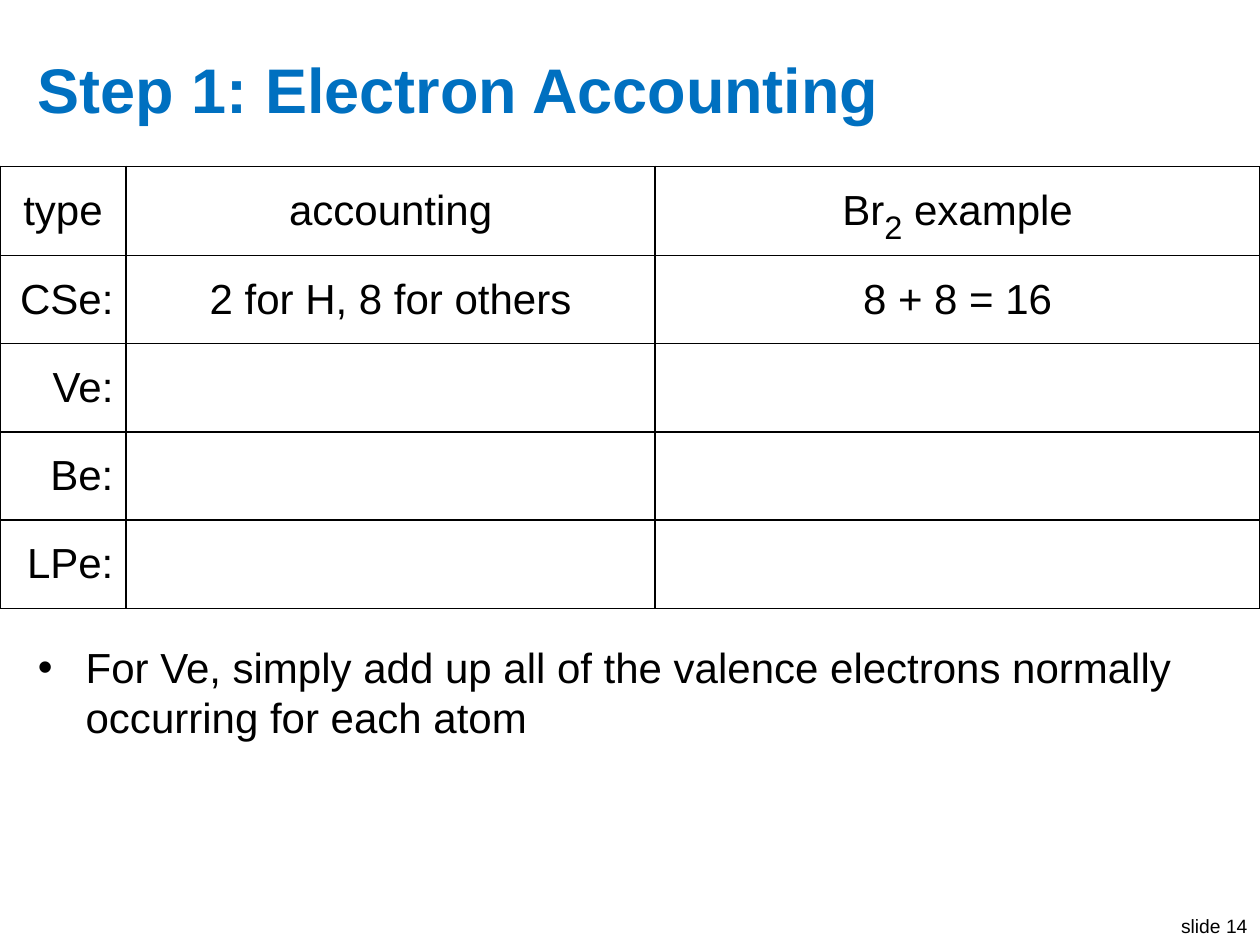
from dataclasses import dataclass

from lxml.etree import SubElement
from pptx import Presentation
from pptx.dml.color import RGBColor as RGB
from pptx.enum.text import MSO_ANCHOR as ANCHOR, MSO_AUTO_SIZE as AUTO, PP_ALIGN as ALIGN
from pptx.oxml import parse_xml
from pptx.oxml.ns import nsdecls, qn
from pptx.util import Inches, Pt


@dataclass(frozen=True)
class Theme:
    font: str = "Arial"
    ink: RGB = RGB(0x00, 0x00, 0x00)
    accent: RGB = RGB(0x00, 0x70, 0xC0)
    paper: RGB = RGB(0xFF, 0xFF, 0xFF)
    title: int = 36
    body: int = 24
    subscript: int = 32
    footer: int = 11
    border: int = 1


THEME = Theme()
MARGIN = 0.2
WIDTH, HEIGHT = 10, 7.5
COLUMNS = (1, 4.2, 4.8)
ROW_HEIGHT = 0.7
ROWS = (
    ("type", "accounting", ("Br", "2", " example")),
    ("CSe:", "2 for H, 8 for others", "8 + 8 = 16"),
    ("Ve:", "", ""),
    ("Be:", "", ""),
    ("LPe:", "", ""),
)


def style_run(r, size, color=THEME.ink, bold=False):
    r.font.name = THEME.font
    r.font.size = Pt(size)
    r.font.color.rgb = color
    r.font.bold = bold


def place(sp, left, top, width, height):
    sp.left, sp.top, sp.width, sp.height = map(Inches, (left, top, width, height))


def add_title(s, text):
    sp = s.shapes.title
    place(sp, MARGIN, 0.3, WIDTH - 2 * MARGIN, 0.8)
    tf = sp.text_frame
    tf.text = text
    tf.auto_size = AUTO.NONE
    tf.vertical_anchor = ANCHOR.MIDDLE
    p = tf.paragraphs[0]
    p.alignment = ALIGN.LEFT
    style_run(p.runs[0], THEME.title, THEME.accent, bold=True)


def add_bullets(s, items):
    sp = s.placeholders[1]
    place(sp, MARGIN, 5.04, WIDTH - 2 * MARGIN, 2.22)
    tf = sp.text_frame
    tf.text = "\n".join(items)
    tf.auto_size = AUTO.NONE
    for p in tf.paragraphs:
        p.space_before = Pt(12)
        pPr = p._p.get_or_add_pPr()
        pPr.set("marL", str(Inches(0.38)))
        pPr.set("indent", str(Inches(-0.38)))
        SubElement(pPr, qn("a:buFont"), typeface=THEME.font)
        SubElement(pPr, qn("a:buChar"), char="•")
        style_run(p.runs[0], THEME.body)


def set_borders(cell):
    tcPr = cell._tc.get_or_add_tcPr()
    for i, side in enumerate("LRTB"):
        tcPr.insert(i, parse_xml(
            f'<a:ln{side} {nsdecls("a")} w="{Pt(THEME.border)}"><a:solidFill>'
            f'<a:srgbClr val="{THEME.ink}"/></a:solidFill></a:ln{side}>'))


def fill_cell(cell, content, alignment):
    """Write a string, or a (base, subscript, rest) tuple, into a cell."""
    cell.fill.solid()
    cell.fill.fore_color.rgb = THEME.paper
    cell.vertical_anchor = ANCHOR.MIDDLE
    set_borders(cell)
    p = cell.text_frame.paragraphs[0]
    p.alignment = alignment
    parts = (content,) if isinstance(content, str) else content
    for i, part in enumerate(filter(None, parts)):
        r = p.add_run()
        r.text = part
        is_subscript = i == 1
        style_run(r, THEME.subscript if is_subscript else THEME.body)
        if is_subscript:
            r.font._element.set("baseline", "-25000")


def add_accounting_table(s):
    frame = s.shapes.add_table(len(ROWS), len(COLUMNS), 0, Inches(1.32),
                               Inches(WIDTH), Inches(ROW_HEIGHT * len(ROWS)))
    table = frame.table
    table.first_row = table.horz_banding = False
    for column, width in zip(table.columns, COLUMNS):
        column.width = Inches(width)
    for i, contents in enumerate(ROWS):
        table.rows[i].height = Inches(ROW_HEIGHT)
        for j, content in enumerate(contents):
            is_row_label = i > 0 and j == 0
            fill_cell(table.cell(i, j), content,
                      ALIGN.RIGHT if is_row_label else ALIGN.CENTER)


def add_slide_label(s, text):
    width, height = 0.75, 0.29
    sp = s.shapes.add_textbox(Inches(WIDTH - width), Inches(HEIGHT - height),
                              Inches(width), Inches(height))
    tf = sp.text_frame
    tf.text = text
    tf.word_wrap = False
    tf.auto_size = AUTO.SHAPE_TO_FIT_TEXT
    p = tf.paragraphs[0]
    p.alignment = ALIGN.RIGHT
    style_run(p.runs[0], THEME.footer)


def main():
    prs = Presentation()
    prs.slide_width, prs.slide_height = Inches(WIDTH), Inches(HEIGHT)
    s = prs.slides.add_slide(prs.slide_layouts[1])
    add_slide_label(s, "slide 14")
    add_title(s, "Step 1: Electron Accounting")
    add_bullets(s, ["For Ve, simply add up all of the valence electrons "
                    "normally occurring for each atom"])
    add_accounting_table(s)
    prs.save("out.pptx")


if __name__ == "__main__":
    main()
